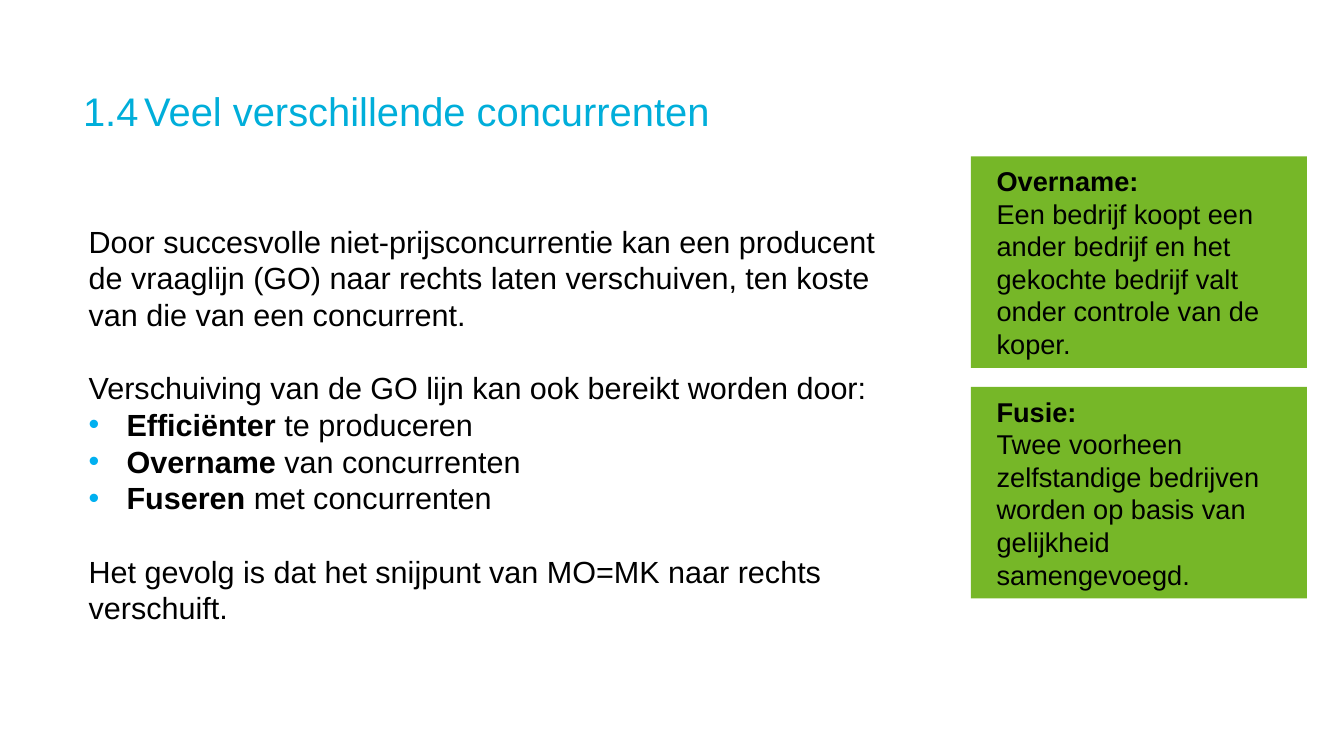
"""Build the slide on shifting demand, takeovers and mergers."""
from lxml import etree
from pptx import Presentation, util as u
from pptx.dml.color import RGBColor
from pptx.enum import text as t
from pptx.oxml.ns import qn


class Deck:
    """Holds the style and the current slide; lengths are percent of the slide."""

    font = "Arial"
    hues = {"title": "00AEDA", "ink": "000000", "dot": "00B0F0", "card": "76B728"}

    def __init__(self, wide, high):
        self.prs = Presentation()
        self.prs.slide_width, self.prs.slide_height = u.Inches(wide), u.Inches(high)
        self.slide = self.prs.slides.add_slide(self.prs.slide_layouts[4])
        self.slots = {s.placeholder_format.idx: s for s in self.slide.placeholders}

    def hue(self, name):
        return RGBColor.from_string(self.hues[name])

    def place(self, idx, x, y, w, h, pad, mid):
        slot = self.slots.pop(idx)
        wide, high = self.prs.slide_width, self.prs.slide_height
        slot.left, slot.top = round(wide * x / 100), round(high * y / 100)
        slot.width, slot.height = round(wide * w / 100), round(high * h / 100)
        frame = slot.text_frame
        frame.word_wrap = True
        frame.auto_size = t.MSO_AUTO_SIZE.NONE
        frame.vertical_anchor = t.MSO_ANCHOR.MIDDLE if mid else t.MSO_ANCHOR.TOP
        frame.margin_left = frame.margin_right = u.Inches(pad[0])
        frame.margin_top = frame.margin_bottom = u.Inches(pad[1])
        return slot

    def mark(self, para, dot, hang):
        props = para._p.get_or_add_pPr()
        props.set("marL", str(u.Inches(hang if dot else 0)))
        props.set("indent", str(u.Inches(-hang if dot else 0)))
        if dot:
            tint = etree.SubElement(props, qn("a:buClr"))
            etree.SubElement(tint, qn("a:srgbClr"), val=self.hues["dot"])
            etree.SubElement(props, qn("a:buFont"), typeface=self.font)
            etree.SubElement(props, qn("a:buChar"), char="•")
        else:
            etree.SubElement(props, qn("a:buNone"))

    def fill(self, para, runs, size, hue="ink"):
        para.alignment = t.PP_ALIGN.LEFT
        for words, bold in runs:
            run = para.add_run()
            run.text = words
            run.font.name, run.font.size = self.font, u.Pt(size)
            run.font.bold = bold
            run.font.color.rgb = self.hue(hue)

    def title(self, words, box, size, stop):
        para = self.place(0, *box, (0, 0), True).text_frame.paragraphs[0]
        tabs = etree.SubElement(para._p.get_or_add_pPr(), qn("a:tabLst"))
        etree.SubElement(tabs, qn("a:tab"), pos=str(u.Inches(stop)), algn="l")
        self.fill(para, [(words, False)], size, "title")

    def body(self, idx, paras, box, size, pad, mid=False):
        slot = self.place(idx, *box, pad, mid)
        frame, line = slot.text_frame, u.Pt(size * 1.2)
        for n, (runs, dot, gap) in enumerate(paras):
            para = frame.add_paragraph() if n else frame.paragraphs[0]
            self.mark(para, dot, 0.62)
            para.line_spacing = line
            para.space_before = line if gap else u.Pt(0)
            para.space_after = u.Pt(0)
            self.fill(para, runs, size)
        return slot

    def card(self, idx, head, words, box):
        paras = [([(head, True)], False, False), ([(words, False)], False, False)]
        slot = self.body(idx, paras, box, 32, (0.42, 0.1), True)
        slot.fill.solid()
        slot.fill.fore_color.rgb = self.hue("card")
        slot.line.fill.background()

    def save(self):
        for slot in self.slots.values():
            slot.element.getparent().remove(slot.element)
        self.prs.save("out.pptx")


def main():
    deck = Deck(21.99, 12.37)
    deck.title("1.4\tVeel verschillende concurrenten", (6.18, 10.99, 87.54, 7.36), 47, 1)

    def plain(words, gap):
        return [(words, False)], False, gap

    points = [("Efficiënter ", "te produceren"), ("Overname", " van concurrenten"),
              ("Fuseren", " met concurrenten")]
    paras = [
        plain("Door succesvolle niet-prijsconcurrentie kan een producent de vraaglijn (GO) "
              "naar rechts laten verschuiven, ten koste van die van een concurrent.", False),
        plain("Verschuiving van de GO lijn kan ook bereikt worden door:", True),
        *[([(key, True), (rest, False)], True, False) for key, rest in points],
        plain("Het gevolg is dat het snijpunt van MO=MK naar rechts verschuift.", True),
    ]
    deck.body(2, paras, (6.14, 29.02, 61.76, 54.73), 36, (0.1, 0.05))

    cards = [
        (1, "Overname:", "Een bedrijf koopt een ander bedrijf en het gekochte bedrijf "
                         "valt onder controle van de koper."),
        (3, "Fusie:", "Twee voorheen zelfstandige bedrijven worden op basis van "
                      "gelijkheid samengevoegd."),
    ]
    for n, (idx, head, words) in enumerate(cards):
        deck.card(idx, head, words, (72.24, 20.7 + n * 30.48, 25.01, 27.97))
    deck.save()


if __name__ == "__main__":
    main()
